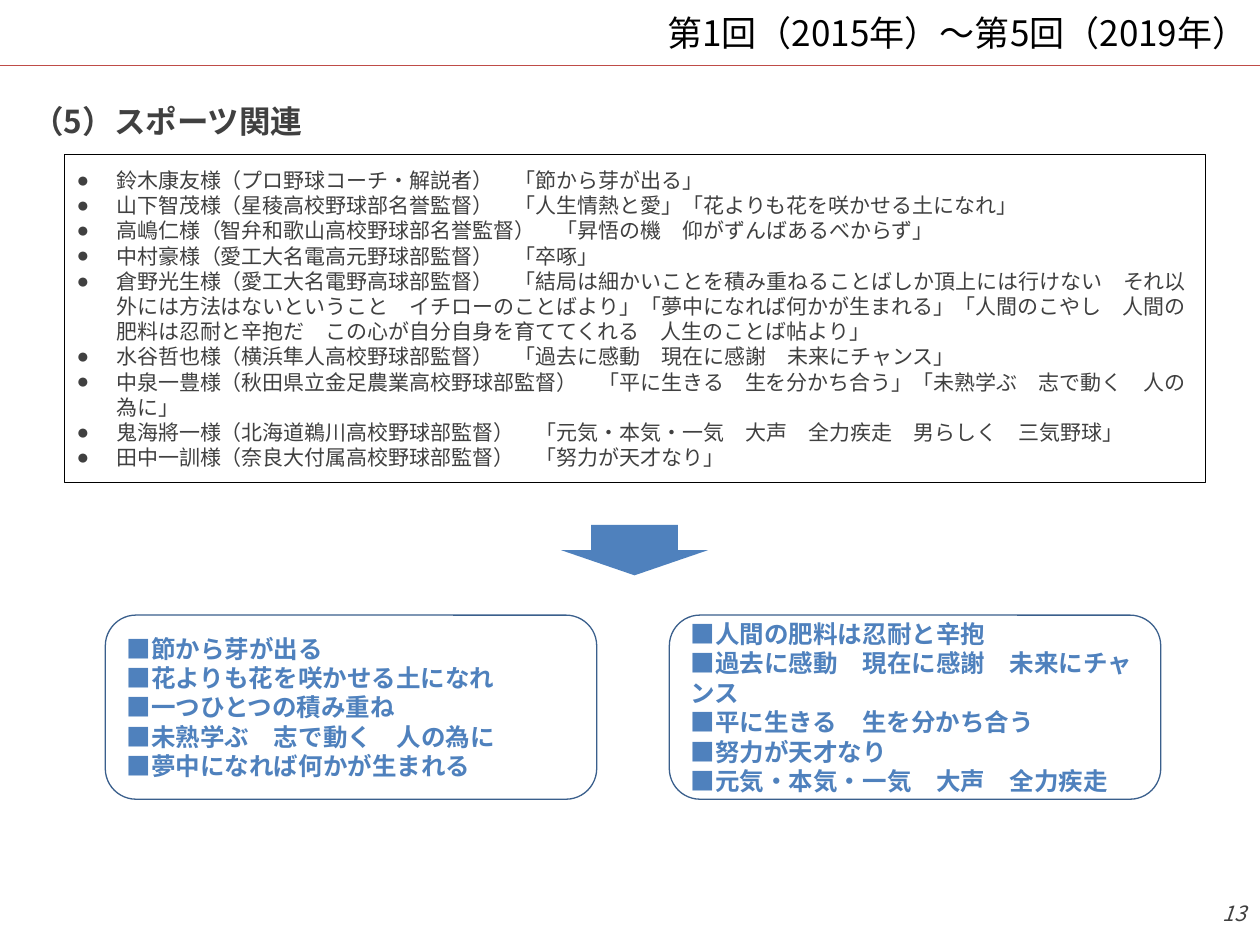
from lxml.etree import SubElement
from pptx import Presentation
from pptx.dml.color import RGBColor
from pptx.enum.shapes import MSO_CONNECTOR, MSO_SHAPE
from pptx.enum.text import MSO_ANCHOR, PP_ALIGN
from pptx.oxml.ns import qn
from pptx.util import Pt

FONT = "Noto Sans CJK JP"
COLORS = {
    "rule": "BF4C48",
    "text": "404040",
    "black": "000000",
    "blue": "4F81BD",
    "navy": "3A5F8C",
}
QUOTES = [
    "鈴木康友様（プロ野球コーチ・解説者）　「節から芽が出る」",
    "山下智茂様（星稜高校野球部名誉監督）　「人生情熱と愛」「花よりも花を咲かせる土になれ」",
    "高嶋仁様（智弁和歌山高校野球部名誉監督）　「昇悟の機　仰がずんばあるべからず」",
    "中村豪様（愛工大名電高元野球部監督）　「卒啄」",
    "倉野光生様（愛工大名電野高球部監督）　「結局は細かいことを積み重ねることばしか頂上には行けない　"
    "それ以外には方法はないということ　イチローのことばより」「夢中になれば何かが生まれる」"
    "「人間のこやし　人間の肥料は忍耐と辛抱だ　この心が自分自身を育ててくれる　人生のことば帖より」",
    "水谷哲也様（横浜隼人高校野球部監督）　「過去に感動　現在に感謝　未来にチャンス」",
    "中泉一豊様（秋田県立金足農業高校野球部監督）　「平に生きる　生を分かち合う」"
    "「未熟学ぶ　志で動く　人の為に」",
    "鬼海將一様（北海道鵜川高校野球部監督）　「元気・本気・一気　大声　全力疾走　男らしく　三気野球」",
    "田中一訓様（奈良大付属高校野球部監督）　「努力が天才なり」",
]
KEYWORDS = [
    [
        "■節から芽が出る",
        "■花よりも花を咲かせる土になれ",
        "■一つひとつの積み重ね",
        "■未熟学ぶ　志で動く　人の為に",
        "■夢中になれば何かが生まれる",
    ],
    [
        "■人間の肥料は忍耐と辛抱",
        "■過去に感動　現在に感謝　未来にチャンス",
        "■平に生きる　生を分かち合う",
        "■努力が天才なり",
        "■元気・本気・一気　大声　全力疾走",
    ],
]


def rgb(name):
    return RGBColor.from_string(COLORS[name])


def write(sp, lines, size, color, bold=False, italic=False,
          align=PP_ALIGN.LEFT, anchor=MSO_ANCHOR.MIDDLE):
    """Fill a shape with one paragraph per line, all in one style."""
    tf = sp.text_frame
    tf.word_wrap = True
    tf.vertical_anchor = anchor
    tf.text = "\n".join(lines)
    for p in tf.paragraphs:
        p.alignment = align
        p.line_spacing = Pt(size * 1.2)
        for r in p.runs:
            font = r.font
            font.name, font.size = FONT, Pt(size)
            font.bold, font.italic = bold, italic
            font.color.rgb = rgb(color)
            SubElement(font._element, qn("a:ea"), typeface=FONT)


def add_bullets(sp):
    indent = Pt(22.5)
    for p in sp.text_frame.paragraphs:
        pPr = p._p.get_or_add_pPr()
        pPr.set("marL", str(indent))
        pPr.set("indent", str(-indent))
        SubElement(pPr, qn("a:buFont"), typeface="Arial")
        SubElement(pPr, qn("a:buChar"), char="●")


def add_text(s, box, text, size, color, **style):
    sp = s.shapes.add_textbox(*map(Pt, box))
    write(sp, [text], size, color, **style)


def add_block(s, kind, box, fill=None, line=None):
    sp = s.shapes.add_shape(kind, *map(Pt, box))
    sp.shadow.inherit = False
    if fill:
        sp.fill.solid()
        sp.fill.fore_color.rgb = rgb(fill)
    else:
        sp.fill.background()
    if line:
        sp.line.color.rgb = rgb(line)
        sp.line.width = Pt(0.75)
    else:
        sp.line.fill.background()
    return sp


def add_rule(s, y, width):
    rule = s.shapes.add_connector(MSO_CONNECTOR.STRAIGHT, 0, Pt(y), Pt(width), Pt(y))
    rule.line.color.rgb = rgb("rule")
    rule.line.width = Pt(0.75)
    SubElement(rule._element.spPr, qn("a:effectLst"))


def main():
    prs = Presentation()
    prs.slide_width, prs.slide_height = Pt(720), Pt(540)
    s = prs.slides.add_slide(prs.slide_layouts[6])

    add_rule(s, 37.5, 720)
    add_text(s, (551, 511, 168, 29), "13", 12, "text", italic=True,
             align=PP_ALIGN.RIGHT, anchor=MSO_ANCHOR.TOP)

    quotes = add_block(s, MSO_SHAPE.RECTANGLE, (36.8, 88.5, 652.2, 187.2), line="black")
    write(quotes, QUOTES, 12, "text")
    add_bullets(quotes)
    add_text(s, (11.5, 54.7, 377, 28), "（5）スポーツ関連", 18, "text",
             bold=True, anchor=MSO_ANCHOR.TOP)

    for i, lines in enumerate(KEYWORDS):
        card = add_block(s, MSO_SHAPE.ROUNDED_RECTANGLE,
                         (60.2 + 322.3 * i, 351.5, 280.8, 105.2), line="navy")
        write(card, lines, 14, "blue", bold=True)

    arrow = add_block(s, MSO_SHAPE.DOWN_ARROW, (320.6, 300, 84, 28.8), fill="blue")
    arrow.adjustments[0] = 0.59
    arrow.adjustments[1] = 0.5

    add_text(s, (0, 0, 720, 37.5), "第1回（2015年）～第5回（2019年）", 20, "black",
             align=PP_ALIGN.RIGHT)
    prs.save("out.pptx")


if __name__ == "__main__":
    main()
